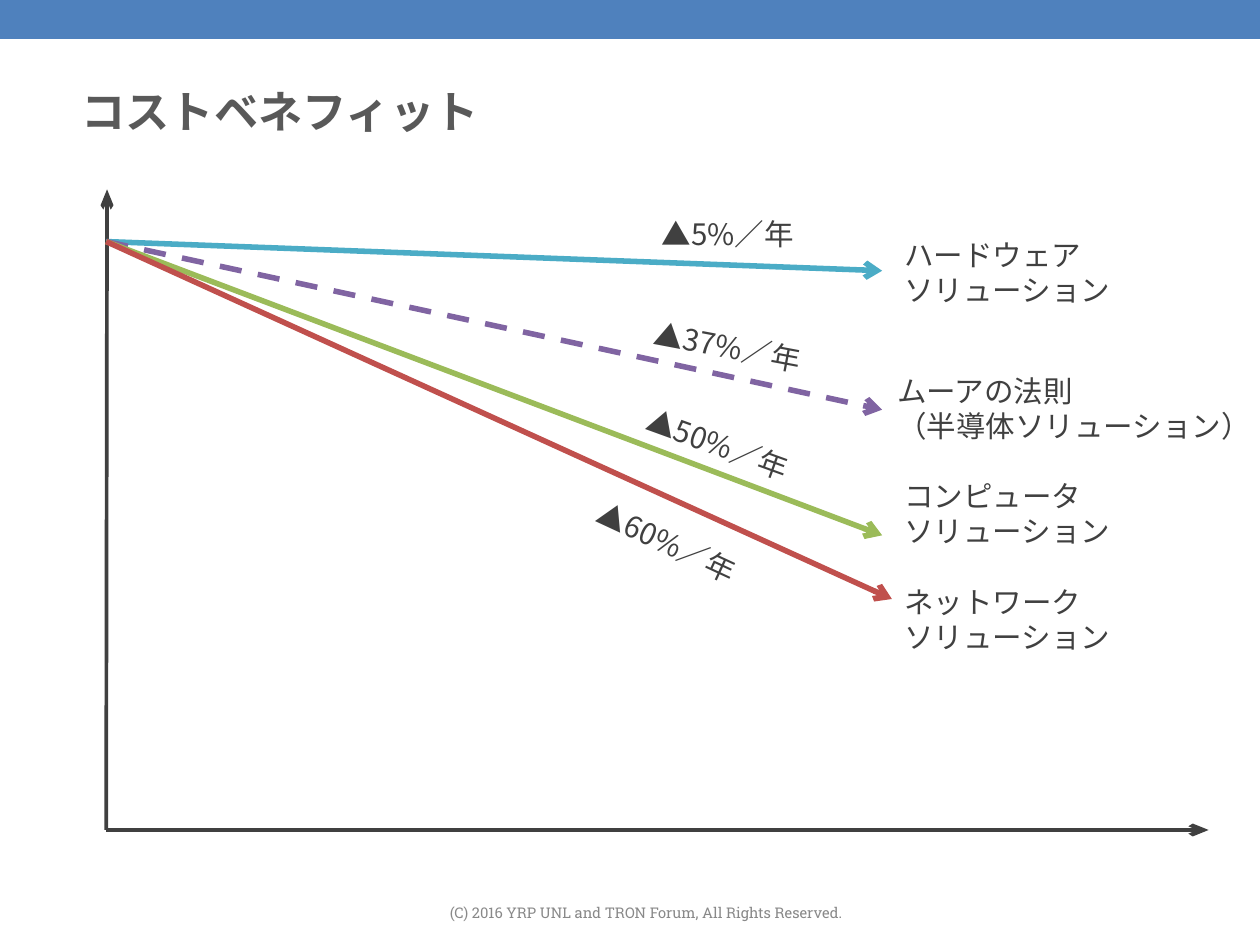
from lxml import etree
from pptx import Presentation
from pptx.dml.color import RGBColor
from pptx.enum.dml import MSO_LINE
from pptx.enum.shapes import MSO_CONNECTOR, MSO_SHAPE
from pptx.enum.text import MSO_ANCHOR, PP_ALIGN
from pptx.oxml.ns import qn
from pptx.util import Inches, Pt

BLUE = RGBColor(0x4F, 0x81, 0xBD)
TEAL = RGBColor(0x4B, 0xAC, 0xC6)
PURPLE = RGBColor(0x80, 0x64, 0xA2)
GREEN = RGBColor(0x9B, 0xBB, 0x59)
RED = RGBColor(0xC0, 0x50, 0x4D)
DARK = RGBColor(0x40, 0x40, 0x40)
GREY = RGBColor(0x59, 0x59, 0x59)
PALE = RGBColor(0x89, 0x89, 0x89)

RECT = MSO_SHAPE.RECTANGLE
STRAIGHT = MSO_CONNECTOR.STRAIGHT
DASH = MSO_LINE.DASH
TOP, MIDDLE = MSO_ANCHOR.TOP, MSO_ANCHOR.MIDDLE
LEFT, CENTER = PP_ALIGN.LEFT, PP_ALIGN.CENTER


class Board:
    font = "Noto Sans CJK JP"
    size = 24
    color = DARK
    pitch = 28.5

    def __init__(self, slide):
        self.slide = slide

    def bar(self, box, color):
        shape = self.slide.shapes.add_shape(RECT, *map(Inches, box))
        shape.shadow.inherit = False
        shape.fill.solid()
        shape.fill.fore_color.rgb = color
        shape.line.color.rgb = color
        shape.line.width = Pt(2)

    def arrow(self, start, end, color, width, dash=None, head="med"):
        line = self.slide.shapes.add_connector(
            STRAIGHT, *map(Inches, start + end))
        line.line.color.rgb = color
        line.line.width = Pt(width)
        if dash:
            line.line.dash_style = dash
        etree.SubElement(line.line._get_or_add_ln(), qn("a:tailEnd"),
                         type="arrow", len=head)
        etree.SubElement(line._element.spPr, qn("a:effectLst"))

    def text(self, text, box, size=None, color=None, font=None, bold=False,
             align=LEFT, anchor=TOP, turn=0, wrap=False, pitch=None):
        shape = self.slide.shapes.add_textbox(*map(Inches, box))
        shape.rotation = turn
        frame = shape.text_frame
        frame.word_wrap = wrap
        frame.vertical_anchor = anchor
        frame.margin_left = frame.margin_right = Inches(0.14)
        frame.margin_top = frame.margin_bottom = Inches(0.07)
        for i, row in enumerate(text.split("\n")):
            para = frame.paragraphs[0] if i == 0 else frame.add_paragraph()
            para.alignment = align
            if pitch:
                para.line_spacing = Pt(pitch)
            run = para.add_run()
            run.text = row
            run.font.size = Pt(size or self.size)
            run.font.bold = bold
            run.font.color.rgb = color or self.color
            run.font.name = font or self.font
            etree.SubElement(run.font._element, qn("a:ea"),
                             typeface=font or self.font)

    def label(self, text, box, turn=0):
        self.text(text, box, turn=turn, pitch=self.pitch)


def main():
    prs = Presentation()
    prs.slide_width, prs.slide_height = Inches(14.24), Inches(10.68)
    board = Board(prs.slides.add_slide(prs.slide_layouts[6]))

    # Header
    board.bar((0, 0, 14.24, 0.43), BLUE)
    board.text("コストベネフィット", (0.78, 0.75, 13.04, 1.01), size=36,
               color=GREY, bold=True, anchor=MIDDLE, wrap=True)

    # Axes
    base = (1.2, 9.38)
    for end in ((1.21, 2.14), (13.66, 9.38)):
        board.arrow(base, end, DARK, 3, head="lg")

    # Names of the solutions
    for text, left, top, width in (
        ("ハードウェア\nソリューション", 10.08, 2.61, 2.62),
        ("ムーアの法則\n（半導体ソリューション）", 10, 4.15, 4.3),
        ("コンピュータ\nソリューション", 10.08, 5.34, 2.62),
        ("ネットワーク\nソリューション", 10.08, 6.53, 2.62),
    ):
        board.label(text, (left, top, width, 0.95))

    # Yearly rates, turned along their lines
    for rate, left, top, turn in (
        (5, 7.34, 2.38, 0),
        (37, 7.24, 3.66, 10.7),
        (50, 7.13, 4.77, 20),
        (60, 6.55, 5.88, 24.9),
    ):
        board.label(f"▲{rate}%／年", (left, top, 2.08, 0.54), turn)

    # Cost lines from a common start
    for end, color, dash in (
        ((9.97, 3.06), TEAL, None),
        ((9.97, 4.63), PURPLE, DASH),
        ((9.97, 6.05), GREEN, None),
        ((10.08, 6.77), RED, None),
    ):
        board.arrow((1.2, 2.73), end, color, 4.5, dash)

    # Footer
    board.text("(C) 2016 YRP UNL and TRON Forum, All Rights Reserved.",
               (0.79, 10.12, 13.03, 0.39), size=12, color=PALE,
               font="Roboto Slab", align=CENTER, anchor=MIDDLE, wrap=True)

    prs.save("out.pptx")


if __name__ == "__main__":
    main()
